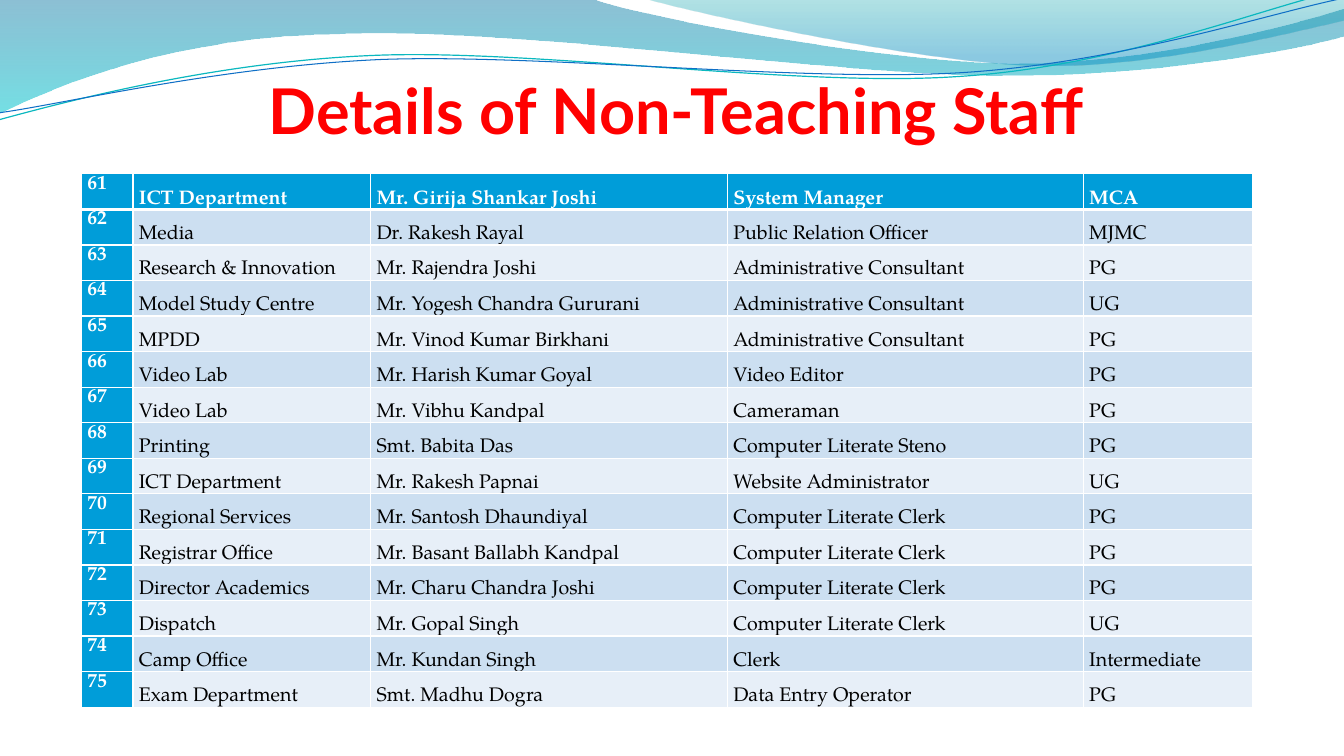
from lxml import etree
from pptx import Presentation
from pptx.dml.color import RGBColor
from pptx.enum import text
from pptx.oxml import ns
from pptx.util import Cm, Pt

COLORS = {
    "title": "FF0000", "header": "009DD9", "band_dark": "CCDFF1", "band_light": "E7EFF8",
    "white": "FFFFFF", "black": "000000", "teal_line": "0AB8BF", "blue_line": "0F6FC6",
    "wave_top": "0074A1", "wave_bottom": "00C6CF", "sheen_top": "00A1A9", "sheen_bottom": "008BBF",
}
FIRST_NUMBER = 61
COLUMN_WIDTHS = [1.3, 5.99, 8.99, 8.97, 4.27]
STAFF = [
    ("ICT Department", "Mr. Girija Shankar Joshi", "System Manager", "MCA"),
    ("Media", "Dr. Rakesh Rayal", "Public Relation Officer", "MJMC"),
    ("Research & Innovation", "Mr. Rajendra Joshi", "Administrative Consultant", "PG"),
    ("Model Study Centre", "Mr. Yogesh Chandra Gururani", "Administrative Consultant", "UG"),
    ("MPDD", "Mr. Vinod Kumar Birkhani", "Administrative Consultant", "PG"),
    ("Video Lab", "Mr. Harish Kumar Goyal", "Video Editor", "PG"),
    ("Video Lab", "Mr. Vibhu Kandpal", "Cameraman", "PG"),
    ("Printing", "Smt. Babita Das", "Computer Literate Steno", "PG"),
    ("ICT Department", "Mr. Rakesh Papnai", "Website Administrator", "UG"),
    ("Regional Services", "Mr. Santosh Dhaundiyal", "Computer Literate Clerk", "PG"),
    ("Registrar Office", "Mr. Basant Ballabh Kandpal", "Computer Literate Clerk", "PG"),
    ("Director Academics", "Mr. Charu Chandra Joshi", "Computer Literate Clerk", "PG"),
    ("Dispatch", "Mr. Gopal Singh", "Computer Literate Clerk", "UG"),
    ("Camp Office", "Mr. Kundan Singh", "Clerk", "Intermediate"),
    ("Exam Department", "Smt. Madhu Dogra", "Data Entry Operator", "PG"),
]

# Outlines in centimetres: a segment of one point is a line, of three a Bézier curve.
WAVE = [
    [(0, 0)], [(14.91, -0.03)],
    [(16.1, 0.43), (22.48, 1.6), (25.68, 1.6)], [(28.91, 1.6), (32.46, 0.66), (33.86, 0.23)],
    [(33.91, 0.91)],
    [(33.3, 1.12), (29.46, 1.93), (25.25, 1.91)], [(21.06, 1.91), (12.93, 0.71), (8.71, 0.86)],
    [(4.37, 0.91), (1.55, 2.11), (-0.03, 2.87)],
]
SHEEN = [
    [(16.23, -0.03)],
    [(17.25, 0.28), (23.09, 1.57), (26.04, 1.65)], [(28.98, 1.75), (32.56, 0.81), (33.86, 0.53)],
    [(33.86, 0)],
]
TEAL_LINE = [
    [(-0.03, 3.02)],
    [(1.63, 2.57), (5.36, 1.57), (9.37, 1.4)], [(13.39, 1.22), (20.07, 2.21), (24.13, 1.93)],
    [(28.19, 1.68), (31.8, 0.2), (33.81, -0.25)],
]
BLUE_LINE = [
    [(0, 2.84)],
    [(1.6, 2.62), (5.54, 1.68), (9.6, 1.5)], [(13.64, 1.35), (20.22, 2.08), (24.26, 1.83)],
    [(28.32, 1.57), (31.88, 0.36), (33.88, -0.05)],
]


def rgb(name):
    return RGBColor.from_string(COLORS[name])


def add_outline(page, segments, close):
    """Draw the segments as one freeform, turning each three-point segment into a curve."""
    points = [(Cm(x), Cm(y)) for segment in segments for x, y in segment]
    builder = page.shapes.build_freeform(*points[0])
    builder.add_line_segments(points[1:], close=close)
    outline = builder.convert_to_shape()
    outline.shadow.inherit = False
    steps = iter(list(outline.element.iter(ns.qn("a:lnTo"))))
    for segment in segments[1:]:
        first = next(steps)
        if len(segment) == 3:
            first.tag = ns.qn("a:cubicBezTo")
            for _ in range(2):
                step = next(steps)
                first.append(step[0])
                step.getparent().remove(step)
    return outline


deck = Presentation()
deck.slide_width, deck.slide_height = Cm(33.87), Cm(19.05)
page = deck.slides.add_slide(deck.slide_layouts[6])

for segments, stops in [
    (WAVE, [("wave_top", 0, 45), ("wave_bottom", 1, 55)]),
    (SHEEN, [("sheen_top", 0, 30), ("sheen_bottom", 0.8, 45)]),
]:
    shape = add_outline(page, segments, True)
    shape.line.fill.background()
    shape.fill.gradient()
    shape.fill.gradient_angle = 270
    for stop, (color, position, _) in zip(shape.fill.gradient_stops, stops):
        stop.color.rgb = rgb(color)
        stop.position = position
    tints = list(shape.element.spPr.iter(ns.qn("a:srgbClr")))
    for tint, (_, _, opacity) in zip(tints, stops):
        etree.SubElement(tint, ns.qn("a:alpha")).set("val", str(opacity * 1000))

for segments, color, width in [(TEAL_LINE, "teal_line", 0.85), (BLUE_LINE, "blue_line", 0.75)]:
    curve = add_outline(page, segments, False)
    curve.fill.background()
    curve.line.color.rgb = rgb(color)
    curve.line.width = Pt(width)

title = page.shapes.add_textbox(Cm(3.7), Cm(1.77), Cm(26.67), Cm(1.93)).text_frame
title.word_wrap = True
title.vertical_anchor = text.MSO_ANCHOR.BOTTOM
title.margin_left = title.margin_right = title.margin_bottom = 0
title.margin_top = Cm(0.13)
title.text = "Details of Non-Teaching Staff"
para = title.paragraphs[0]
para.alignment = text.PP_ALIGN.CENTER
font = para.runs[0].font
font.name, font.size, font.bold = "Lato", Pt(45), True
font.color.rgb = rgb("title")

table = page.shapes.add_table(len(STAFF), len(COLUMN_WIDTHS), Cm(2.05), Cm(4.38),
                              Cm(sum(COLUMN_WIDTHS)), Cm(13.44)).table
table.first_col = True
for column, width in zip(table.columns, COLUMN_WIDTHS):
    column.width = Cm(width)
for r, person in enumerate(STAFF):
    for c, value in enumerate((str(FIRST_NUMBER + r), *person)):
        cell = table.cell(r, c)
        is_heading = r == 0 or c == 0
        band = "band_dark" if r % 2 else "band_light"
        cell.margin_left = cell.margin_right = Cm(0.15)
        cell.margin_top = cell.margin_bottom = 0
        cell.vertical_anchor = text.MSO_ANCHOR.BOTTOM if c else text.MSO_ANCHOR.TOP
        properties = cell._tc.get_or_add_tcPr()
        for side in "LRTB":
            thick = (r, side) in [(0, "B"), (1, "T")]
            border = etree.SubElement(properties, ns.qn(f"a:ln{side}"), w=str(Pt(3 if thick else 1)))
            paint = etree.SubElement(border, ns.qn("a:solidFill"))
            etree.SubElement(paint, ns.qn("a:srgbClr"), val=COLORS["white"])
        cell.fill.solid()
        cell.fill.fore_color.rgb = rgb("header" if is_heading else band)
        cell.text_frame.text = value
        para = cell.text_frame.paragraphs[0]
        para.line_spacing = 1.07
        font = para.runs[0].font
        font.name, font.size, font.bold = "TeX Gyre Pagella", Pt(14), is_heading
        font.color.rgb = rgb("white" if is_heading else "black")

deck.save("out.pptx")
